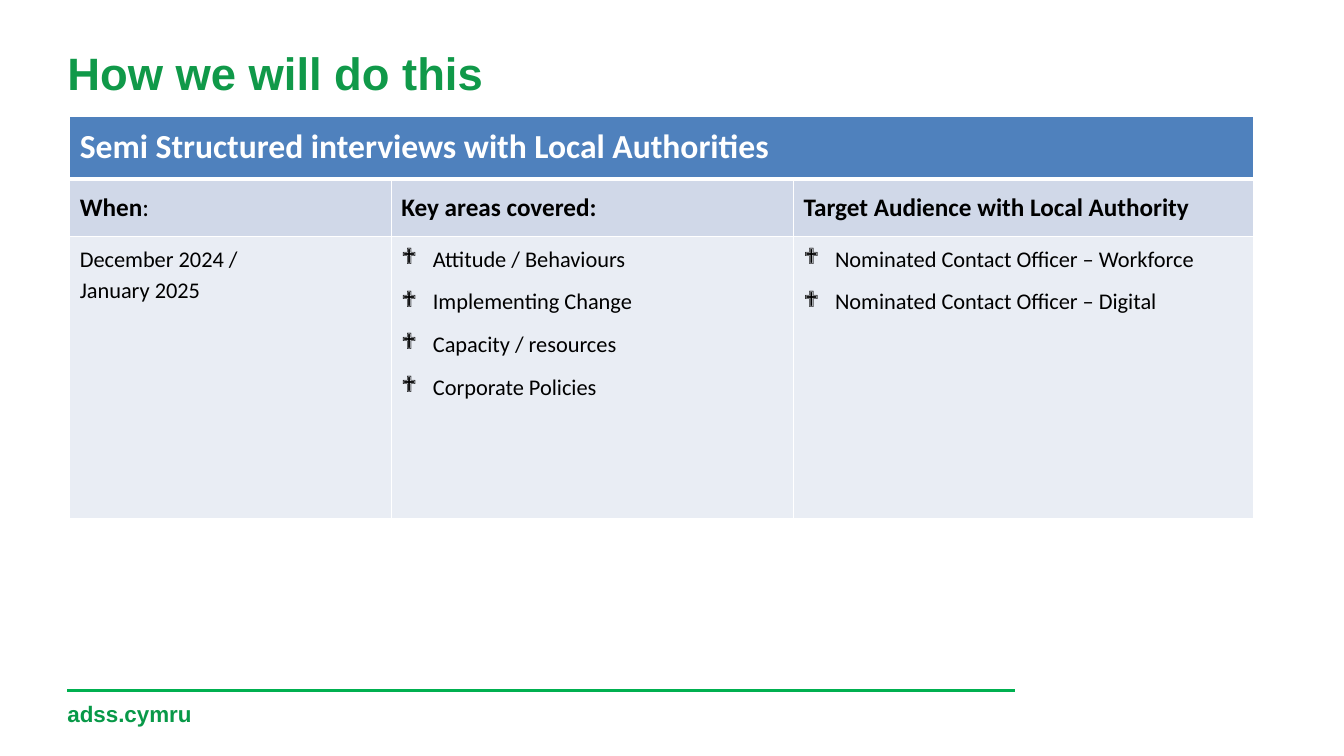
from lxml.etree import SubElement
from pptx import Presentation
from pptx.dml.color import RGBColor
from pptx.enum.shapes import MSO_CONNECTOR as Connector
from pptx.enum.text import MSO_ANCHOR as Anchor, MSO_AUTO_SIZE as AutoSize, PP_ALIGN as Align
from pptx.oxml.ns import qn
from pptx.util import Pt

WHITE = RGBColor(0xFF, 0xFF, 0xFF)
BLACK = RGBColor(0, 0, 0)
TITLE_GREEN = RGBColor(0x10, 0x99, 0x49)
FOOTER_GREEN = RGBColor(0x08, 0x99, 0x48)
LINE_GREEN = RGBColor(0x00, 0xB0, 0x50)
HEADER_BLUE = RGBColor(0x4F, 0x81, 0xBD)
LABEL_BLUE = RGBColor(0xD0, 0xD8, 0xE8)
BODY_BLUE = RGBColor(0xE9, 0xED, 0xF4)

TITLE = "How we will do this"
FOOTER = "adss.cymru"
HEADER = "Semi Structured interviews with Local Authorities"
LABELS = [
    [("When", True), (":", False)],
    [("Key areas covered:", True)],
    [("Target Audience with Local Authority", True)],
]
DATES = ["December 2024 /", "January 2025"]
BULLETS = {
    1: ["Attitude / Behaviours", "Implementing Change", "Capacity / resources", "Corporate Policies"],
    2: ["Nominated Contact Officer – Workforce", "Nominated Contact Officer – Digital"],
}
COLUMN_WIDTHS = [229.7, 287.3, 329]
ROW_HEIGHTS = [45.2, 41, 201.6]
ROW_FILLS = [HEADER_BLUE, LABEL_BLUE, BODY_BLUE]
MARGIN_LEFT = 48.2
INDENT = 22.5


def add_text(paragraph, text, font_name, size, color, bold=False):
    run = paragraph.add_run()
    run.text = text
    run.font.name = font_name
    run.font.size = Pt(size)
    run.font.bold = bold
    run.font.color.rgb = color


def add_line_text(shape, text, size, color):
    frame = shape.text_frame
    frame.margin_left = frame.margin_top = frame.margin_right = frame.margin_bottom = 0
    frame.word_wrap = True
    frame.auto_size = AutoSize.NONE
    frame.vertical_anchor = Anchor.TOP
    paragraph = frame.paragraphs[0]
    paragraph.alignment = Align.LEFT
    add_text(paragraph, text, "Arial", size, color, True)


def add_borders(cell, row_index):
    properties = cell._tc.get_or_add_tcPr()
    heavy_side = {0: "lnB", 1: "lnT"}.get(row_index)
    for side in ("lnL", "lnR", "lnT", "lnB"):
        width = Pt(3 if side == heavy_side else 1)
        border = SubElement(properties, qn(f"a:{side}"), w=str(width))
        fill = SubElement(border, qn("a:solidFill"))
        SubElement(fill, qn("a:srgbClr"), val=str(WHITE))


def space_body(paragraph):
    paragraph.line_spacing = 1.15
    paragraph.space_after = Pt(8)


def add_bullet(paragraph):
    properties = paragraph._p.get_or_add_pPr()
    properties.set("marL", str(Pt(INDENT)))
    properties.set("indent", str(Pt(-INDENT)))
    SubElement(properties, qn("a:buFont"), typeface="Wingdings")
    SubElement(properties, qn("a:buChar"), char="❖")


presentation = Presentation()
presentation.slide_width = Pt(960)
presentation.slide_height = Pt(540)
slide = presentation.slides.add_slide(presentation.slide_layouts[5])

footer_line = slide.shapes.add_connector(
    Connector.STRAIGHT, Pt(MARGIN_LEFT), Pt(493.2), Pt(725), Pt(493.2))
footer_line.line.color.rgb = LINE_GREEN
footer_line.line.width = Pt(1.75)
SubElement(footer_line._element.spPr, qn("a:effectLst"))

footer = slide.shapes.add_textbox(Pt(MARGIN_LEFT), Pt(500.4), Pt(224), Pt(28.8))
add_line_text(footer, FOOTER, 16, FOOTER_GREEN)

title = slide.shapes.title
title.left, title.top, title.width, title.height = Pt(MARGIN_LEFT), Pt(32.4), Pt(864), Pt(50.4)
add_line_text(title, TITLE, 32.4, TITLE_GREEN)

table = slide.shapes.add_table(
    len(ROW_HEIGHTS), len(COLUMN_WIDTHS), Pt(49.8), Pt(82.8),
    Pt(sum(COLUMN_WIDTHS)), Pt(sum(ROW_HEIGHTS))).table
for column, width in zip(table.columns, COLUMN_WIDTHS):
    column.width = Pt(width)
for row_index, (row, height) in enumerate(zip(table.rows, ROW_HEIGHTS)):
    row.height = Pt(height)
    for cell in row.cells:
        add_borders(cell, row_index)
        cell.fill.solid()
        cell.fill.fore_color.rgb = ROW_FILLS[row_index]
        cell.vertical_anchor = Anchor.TOP if row_index == 2 else Anchor.MIDDLE

header_cell = table.cell(0, 0)
header_cell.merge(table.cell(0, 2))
add_text(header_cell.text_frame.paragraphs[0], HEADER, "Calibri", 24, WHITE, True)

for column_index, label in enumerate(LABELS):
    paragraph = table.cell(1, column_index).text_frame.paragraphs[0]
    for text, bold in label:
        add_text(paragraph, text, "Calibri", 18, BLACK, bold)

dates = table.cell(2, 0).text_frame.paragraphs[0]
space_body(dates)
add_text(dates, DATES[0], "Calibri", 16, BLACK)
dates.add_line_break()
add_text(dates, DATES[1], "Calibri", 16, BLACK)

for column_index, items in BULLETS.items():
    frame = table.cell(2, column_index).text_frame
    for item_index, item in enumerate(items):
        paragraph = frame.add_paragraph() if item_index else frame.paragraphs[0]
        add_bullet(paragraph)
        space_body(paragraph)
        add_text(paragraph, item, "Calibri", 16, BLACK)

presentation.save("out.pptx")
